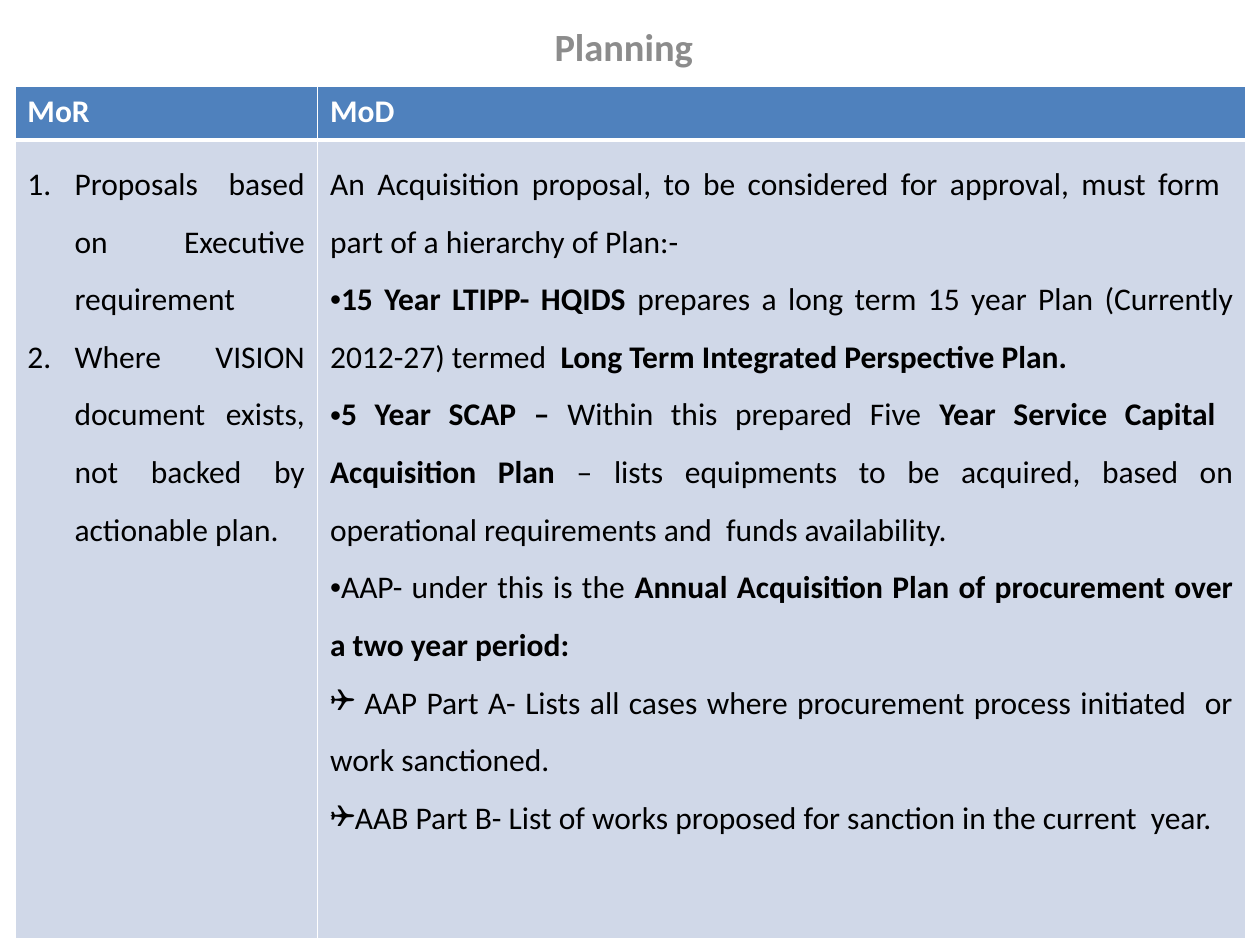
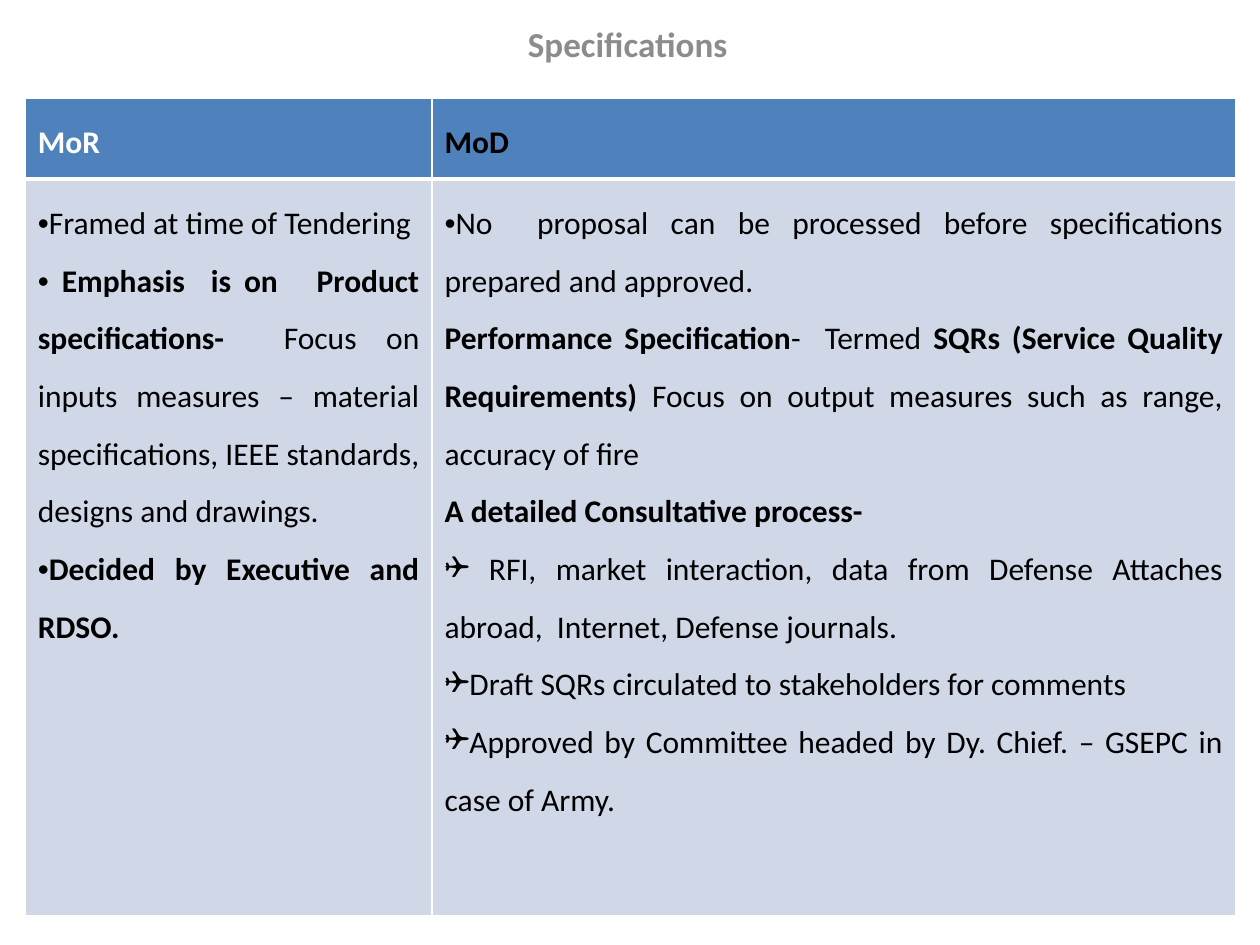
from lxml import etree
from pptx import Presentation
from pptx.dml.color import RGBColor
from pptx.enum.text import MSO_ANCHOR, PP_ALIGN
from pptx.oxml.ns import qn
from pptx.util import Cm, Pt

BLUE = RGBColor(0x4F, 0x81, 0xBD)
PALE = RGBColor(0xD0, 0xD8, 0xE8)
GREY = RGBColor(0x8C, 0x8C, 0x8C)
WHITE = RGBColor(0xFF, 0xFF, 0xFF)
BLACK = RGBColor(0, 0, 0)
CENTER, JUSTIFY, LEFT = PP_ALIGN.CENTER, PP_ALIGN.JUSTIFY, PP_ALIGN.LEFT
BOTTOM = MSO_ANCHOR.BOTTOM
FONT = "Calibri"
BULLETS = {"•": "Arial", "❑": "Wingdings"}
NUMBER = "#"
INDENT = Cm(0.95)

# Body text: a leading •, ❑ or # sets the bullet, ** turns bold on and off
PLAN_MOR = [
    "#Proposals based on Executive requirement",
    "#Where VISION document exists, not backed by actionable plan.",
]
PLAN_MOD = [
    "An Acquisition proposal, to be considered for approval, must form  "
    "part of a hierarchy of Plan:-",
    "•**15 Year LTIPP- HQIDS **prepares a long term 15 year Plan "
    "(Currently 2012-27) termed ** Long Term Integrated Perspective Plan. ",
    "•**5 Year SCAP – **Within this prepared Five **Year Service Capital  "
    "Acquisition Plan** – lists equipments to be acquired, based on "
    "operational requirements and  funds availability.",
    "•AAP- under this is the **Annual Acquisition Plan of procurement "
    "over a two year period:",
    "❑ AAP Part A- Lists all cases where procurement process initiated  "
    "or work sanctioned.",
    "❑AAB Part B- List of works proposed for sanction in the current  year. ",
]
SPEC_MOR = [
    "•Framed at time of Tendering",
    "•** Emphasis  is on   Product specifications-  **Focus on inputs "
    "measures – material specifications, IEEE standards, designs and drawings.",
    "•**Decided by Executive and RDSO.",
]
SPEC_MOD = [
    "•No  proposal can be processed before specifications prepared and approved.",
    "**Performance Specification**-  Termed **SQRs (Service Quality "
    "Requirements) **Focus on output measures such as range, accuracy of fire ",
    "**A detailed Consultative process-",
    "❑ RFI, market interaction, data from Defense Attaches abroad,  "
    "Internet, Defense journals.",
    "❑Draft SQRs circulated to stakeholders for comments",
    "❑Approved by Committee headed by Dy. Chief. – GSEPC in case of Army.",
]


class Deck:
    def __init__(self):
        self.prs = Presentation()
        self.prs.slide_width, self.prs.slide_height = Cm(25.4), Cm(19.05)
        self.slide = None

    def page(self):
        self.slide = self.prs.slides.add_slide(self.prs.slide_layouts[6])

    def title(self, text, top, height, size):
        box = self.slide.shapes.add_textbox(Cm(1.78), Cm(top), Cm(21.59), Cm(height))
        frame = box.text_frame
        frame.word_wrap = True
        frame.vertical_anchor = BOTTOM
        self.line(frame.paragraphs[0], "**" + text, GREY, size, CENTER)

    def line(self, para, text, color, size=18, align=JUSTIFY, space=None):
        para.alignment = align
        if space:
            para.line_spacing = space
        if text[0] in BULLETS or text[0] == NUMBER:
            self.bullet(para, text[0])
            text = text[1:]
        font = para.font
        font.name, font.size, font.color.rgb = FONT, Pt(size), color
        parts = [(part, i % 2 == 1) for i, part in enumerate(text.split("**")) if part]
        if len(parts) == 1:
            font.bold = parts[0][1]
        for part, bold in parts:
            run = para.add_run()
            run.text = part
            if len(parts) > 1:
                run.font.bold = bold

    def bullet(self, para, mark):
        props = para._p.get_or_add_pPr()
        if mark == NUMBER:
            props.set("marL", str(INDENT))
            props.set("indent", str(-INDENT))
            etree.SubElement(props, qn("a:buFont"), typeface="+mj-lt")
            etree.SubElement(props, qn("a:buAutoNum"), type="arabicPeriod")
        else:
            etree.SubElement(props, qn("a:buFont"), typeface=BULLETS[mark])
            etree.SubElement(props, qn("a:buChar"), char=mark)

    def border(self, cell, **widths):
        props = cell._tc.get_or_add_tcPr()
        for i, side in enumerate("LRTB"):
            edge = etree.Element(qn("a:ln" + side), w=str(Pt(widths.get(side, 1))))
            fill = etree.SubElement(edge, qn("a:solidFill"))
            etree.SubElement(fill, qn("a:srgbClr"), val=str(WHITE))
            props.insert(i, edge)

    def table(self, left, top, cols, rows, heads, bodies):
        """heads: (text, colour, alignment, line spacing) for each column."""
        frame = self.slide.shapes.add_table(
            2, len(cols), Cm(left), Cm(top), Cm(sum(cols)), Cm(sum(rows)))
        grid = frame.table
        grid.horz_banding = False
        for row, height in zip(grid.rows, rows):
            row.height = Cm(height)
        for i, width in enumerate(cols):
            grid.columns[i].width = Cm(width)
            # Header cell
            head = grid.cell(0, i)
            self.paint(head, BLUE)
            self.border(head, B=3)
            text, color, align, space = heads[i]
            para = head.text_frame.paragraphs[0]
            self.line(para, "**" + text, color, align=align, space=space)
            # Body cell
            body = grid.cell(1, i)
            self.paint(body, PALE)
            self.border(body, T=3)
            frame = body.text_frame
            for j, text in enumerate(bodies[i]):
                para = frame.add_paragraph() if j else frame.paragraphs[0]
                self.line(para, text, BLACK, space=1.5)

    def paint(self, cell, color):
        cell.fill.solid()
        cell.fill.fore_color.rgb = color


def main():
    deck = Deck()

    # Planning
    deck.page()
    deck.title("Planning", 0.33, 1.19, 22)
    deck.table(0.3, 1.73, (6.1, 18.72), (1.09, 16.1),
               [("MoR", WHITE, LEFT, None), ("MoD", WHITE, LEFT, None)],
               [PLAN_MOR, PLAN_MOD])

    # Specifications
    deck.page()
    deck.table(0.51, 1.98, (8.2, 16.2), (1.63, 14.86),
               [("MoR", WHITE, JUSTIFY, 1.5), ("MoD", BLACK, JUSTIFY, 1.5)],
               [SPEC_MOR, SPEC_MOD])
    deck.title(" Specifications", 0, 1.42, 20)

    deck.prs.save("out.pptx")


if __name__ == "__main__":
    main()
